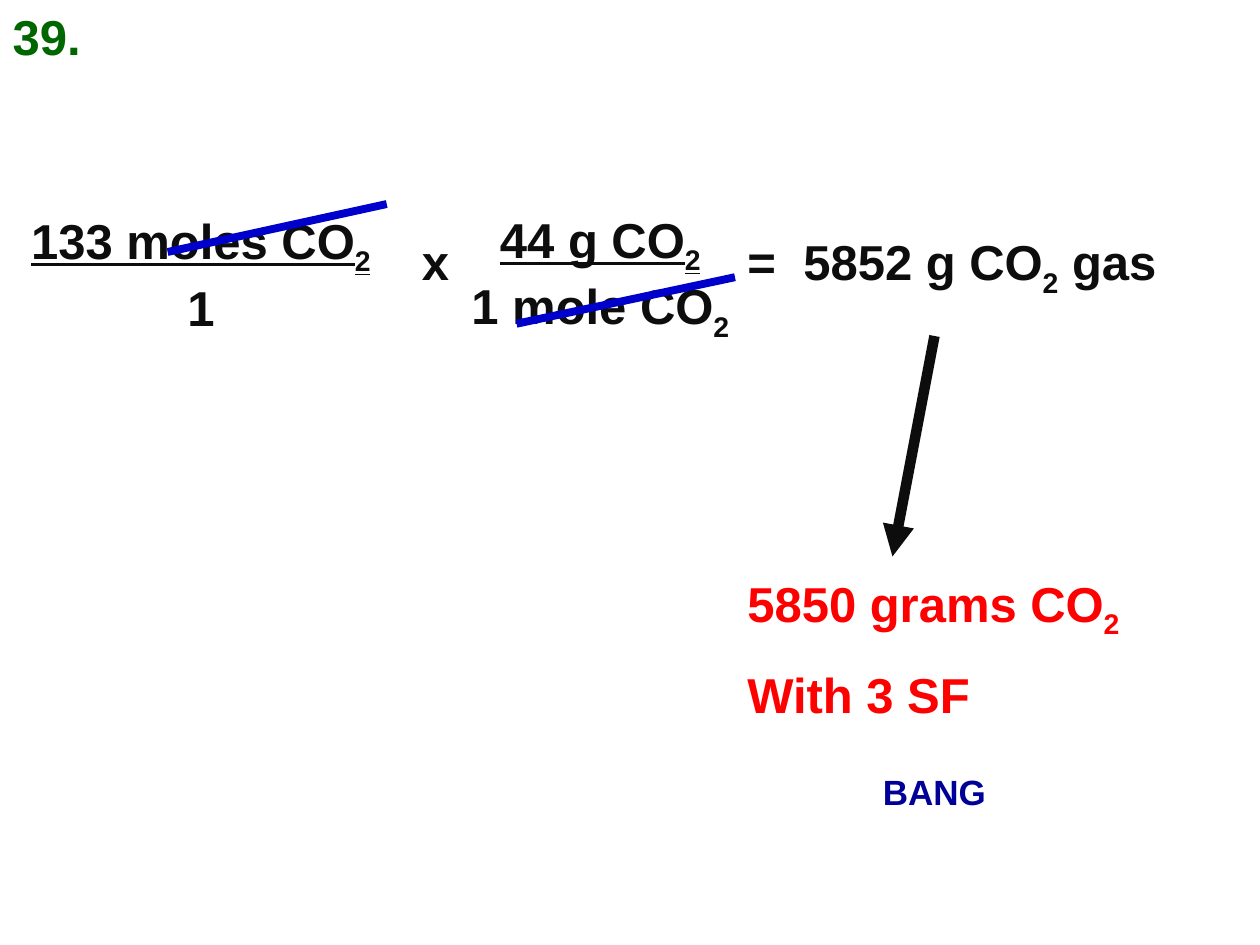
from lxml import etree
from pptx import Presentation
from pptx.dml.color import RGBColor
from pptx.enum.shapes import MSO_CONNECTOR
from pptx.enum.text import MSO_ANCHOR, MSO_AUTO_SIZE, PP_ALIGN
from pptx.oxml.ns import qn
from pptx.util import Pt

STRAIGHT = MSO_CONNECTOR.STRAIGHT
TOP = MSO_ANCHOR.TOP
NO_FIT = MSO_AUTO_SIZE.NONE
LEFT, CENTER = PP_ALIGN.LEFT, PP_ALIGN.CENTER

INK = RGBColor(0x0D, 0x0D, 0x0D)
GREEN = RGBColor(0x00, 0x66, 0x00)
RED = RGBColor(0xFF, 0x00, 0x00)
STRIKE_BLUE = RGBColor(0x00, 0x00, 0xCC)
NAVY = RGBColor(0x00, 0x00, 0x99)


class SolutionSlide:
    font = "Arial"
    size = 28
    paragraph_gap = 14
    equals_tab = 32

    def __init__(self, presentation):
        self.slide = presentation.slides.add_slide(presentation.slide_layouts[5])

    def add_formula(self, paragraph, text, color, size=None, underline=None):
        for index, part in enumerate(text.replace("_2", "|2|").split("|")):
            if not part:
                continue
            run = paragraph.add_run()
            run.text = part
            run.font.name = self.font
            run.font.size = Pt(size or self.size)
            run.font.bold = True
            run.font.underline = underline
            run.font.color.rgb = color
            if index % 2:
                run.font._element.set("baseline", "-25000")

    def box(self, left, top, width, height, wrap=True):
        shape = self.slide.shapes.add_textbox(Pt(left), Pt(top), Pt(width), Pt(height))
        shape.text_frame.word_wrap = wrap
        return shape.text_frame

    def title(self, text, left, top, width, height):
        heading = self.slide.shapes.title
        heading.left, heading.top = Pt(left), Pt(top)
        heading.width, heading.height = Pt(width), Pt(height)
        frame = heading.text_frame
        frame.vertical_anchor = TOP
        frame.auto_size = NO_FIT
        frame.paragraphs[0].alignment = LEFT
        self.add_formula(frame.paragraphs[0], text, GREEN)

    def text(self, lines, left, top, width, height, color=INK, size=None, align=LEFT):
        frame = self.box(left, top, width, height)
        for index, line in enumerate(lines):
            paragraph = frame.add_paragraph() if index else frame.paragraphs[0]
            paragraph.alignment = align
            if index:
                paragraph.space_before = Pt(self.paragraph_gap)
            if "\t" in line:
                properties = paragraph._p.get_or_add_pPr()
                stops = etree.SubElement(properties, qn("a:tabLst"))
                etree.SubElement(stops, qn("a:tab"), pos=str(Pt(self.equals_tab)), algn="l")
            self.add_formula(paragraph, line, color, size)

    def fraction(self, numerator, denominator, left, top, width, height):
        paragraph = self.box(left, top, width, height, wrap=False).paragraphs[0]
        paragraph.alignment = CENTER
        self.add_formula(paragraph, numerator, INK, underline=True)
        paragraph.add_line_break()
        self.add_formula(paragraph, denominator, INK)

    def line(self, start, end, color, weight, arrow=False):
        connector = self.slide.shapes.add_connector(STRAIGHT, *map(Pt, start + end))
        connector.line.color.rgb = color
        connector.line.width = Pt(weight)
        if arrow:
            outline = connector._element.spPr.find(qn("a:ln"))
            etree.SubElement(outline, qn("a:tailEnd"), type="triangle")
        etree.SubElement(connector._element.spPr, qn("a:effectLst"))


def main():
    presentation = Presentation()
    presentation.slide_width, presentation.slide_height = Pt(720), Pt(540)
    solution = SolutionSlide(presentation)

    solution.title("39.", 0, 0, 66, 41)

    solution.fraction("133 moles CO_2", "1", 8.6, 116.6, 212.4, 75)
    solution.fraction("44 g CO_2", "1 mole CO_2", 260.6, 115.9, 164.9, 75)
    solution.text(["x"], 234, 129, 42, 41)
    solution.text(["=\t5852 g CO_2 gas"], 420, 129, 279, 41)
    solution.text(["5850 grams CO_2", "With 3 SF"], 420, 324, 279, 100, RED)

    solution.line((221, 116.6), (95.8, 144), STRIKE_BLUE, 4.5)
    solution.line((420, 158.4), (295.2, 185), STRIKE_BLUE, 4.5)
    solution.line((534, 192), (510, 318), INK, 6, arrow=True)

    solution.text(["BANG"], 429, 437, 210, 32, NAVY, 20, CENTER)

    presentation.save("out.pptx")


if __name__ == "__main__":
    main()
